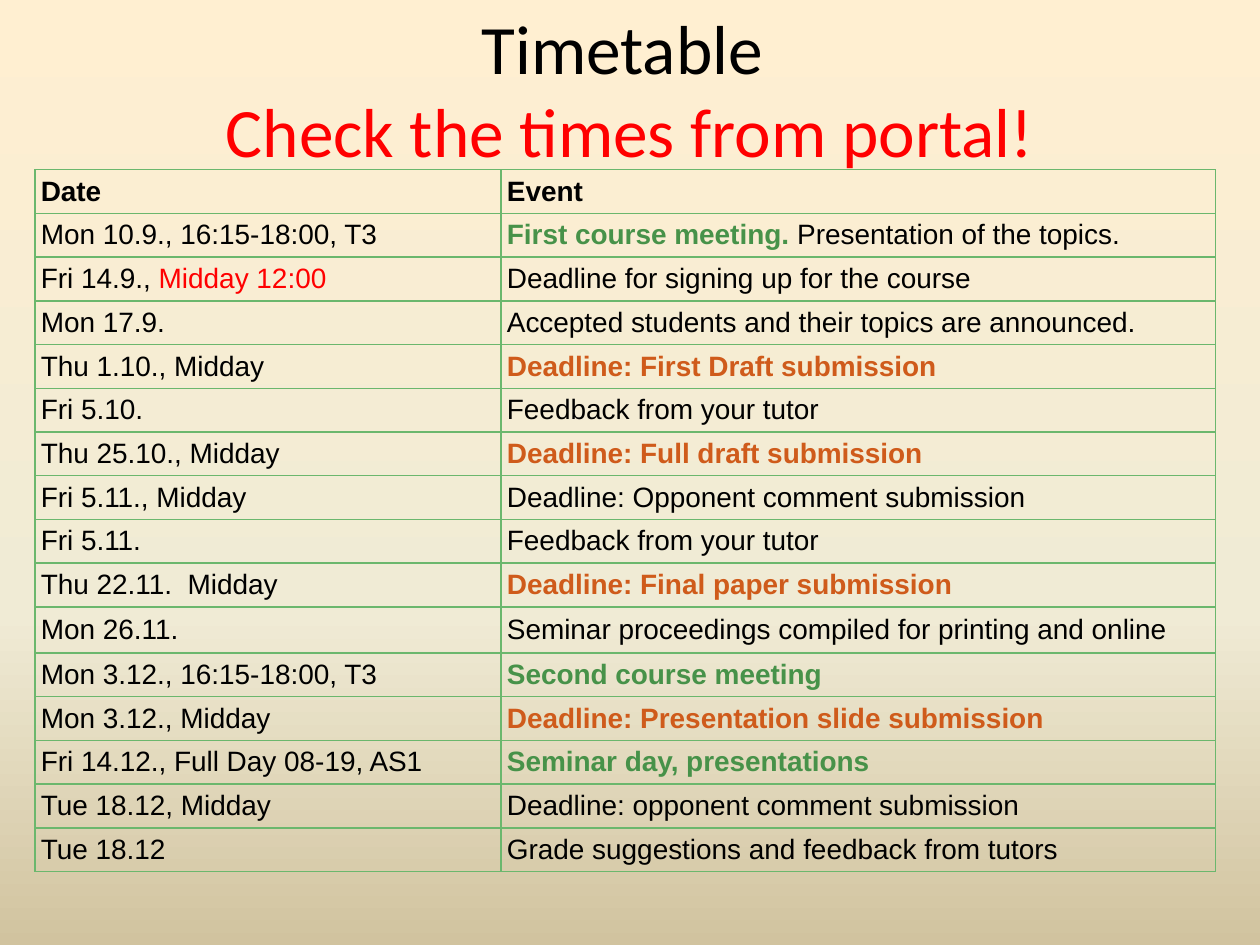
import copy
from dataclasses import dataclass

import lxml.etree
import pptx
import pptx.dml.color
import pptx.enum.text
import pptx.oxml.ns
import pptx.util

COLORS = {
    "text": "000000",
    "alert": "FF0000",
    "meeting": "479249",
    "deadline": "CF5B1B",
    "border": "6BB76D",
}
BACKGROUND_STOPS = ((0, "FFEFD1"), (0.65, "F0EBD5"), (1, "D1C39F"))
COLUMN_WIDTHS = (266.4, 408.2)
ROW_HEIGHT = 25
TALL_ROWS = {10: 26.4}
CELL_FORMAT = {
    "vertical_anchor": pptx.enum.text.MSO_ANCHOR.MIDDLE,
    **{
        f"margin_{side}": pptx.util.Pt(3.3)
        for side in ("left", "right", "top", "bottom")
    },
}
TITLE_FORMAT = {
    "word_wrap": True,
    "auto_size": pptx.enum.text.MSO_AUTO_SIZE.NONE,
    "vertical_anchor": pptx.enum.text.MSO_ANCHOR.MIDDLE,
}


@dataclass(frozen=True)
class Span:
    text: str
    color: str = "text"
    bold: bool = False


@dataclass(frozen=True)
class Entry:
    date: tuple[Span, ...]
    event: tuple[Span, ...]


def entry(date: str, event: str, color: str = "text", bold: bool = False) -> Entry:
    return Entry((Span(date, bold=bold and color == "text"),), (Span(event, color, bold),))


def deadline(date: str, event: str) -> Entry:
    return entry(date, f"Deadline: {event} submission", "deadline", True)


ENTRIES = (
    entry("Date", "Event", bold=True),
    Entry(
        (Span("Mon 10.9., 16:15-18:00, T3"),),
        (Span("First course meeting. ", "meeting", True), Span("Presentation of the topics.")),
    ),
    Entry(
        (Span("Fri 14.9., "), Span("Midday 12:00", "alert")),
        (Span("Deadline for signing up for the course"),),
    ),
    entry("Mon 17.9.", "Accepted students and their topics are announced."),
    deadline("Thu 1.10., Midday", "First Draft"),
    entry("Fri 5.10.", "Feedback from your tutor"),
    deadline("Thu 25.10., Midday", "Full draft"),
    entry("Fri 5.11., Midday", "Deadline: Opponent comment submission"),
    entry("Fri 5.11.", "Feedback from your tutor"),
    deadline("Thu 22.11.  Midday", "Final paper"),
    entry("Mon 26.11.", "Seminar proceedings compiled for printing and online"),
    entry("Mon 3.12., 16:15-18:00, T3", "Second course meeting", "meeting", True),
    deadline("Mon 3.12., Midday", "Presentation slide"),
    entry("Fri 14.12., Full Day 08-19, AS1", "Seminar day, presentations", "meeting", True),
    entry("Tue 18.12, Midday", "Deadline: opponent comment submission"),
    entry("Tue 18.12", "Grade suggestions and feedback from tutors"),
)


def apply_format(target: object, values: dict) -> None:
    for name, value in values.items():
        setattr(target, name, value)


def add_span(para, span: Span, font: str, size: float) -> None:
    run = para.add_run()
    run.text = span.text
    apply_format(
        run.font, {"name": font, "size": pptx.util.Pt(size), "bold": span.bold}
    )
    run.font.color.rgb = pptx.dml.color.RGBColor.from_string(COLORS[span.color])


def paint_background(page) -> None:
    fill = page.background.fill
    fill.gradient()
    fill.gradient_angle = 270
    stop_list = page._element.find(".//" + pptx.oxml.ns.qn("a:gsLst"))
    stop_list.append(copy.deepcopy(stop_list[-1]))
    for stop, (position, color) in zip(fill.gradient_stops, BACKGROUND_STOPS):
        stop.position = position
        stop.color.rgb = pptx.dml.color.RGBColor.from_string(color)


def add_title(page) -> None:
    box = page.shapes.add_textbox(*map(pptx.util.Pt, (48, 29.5, 624, 42)))
    apply_format(box.text_frame, TITLE_FORMAT)
    para = box.text_frame.paragraphs[0]
    para.alignment = pptx.enum.text.PP_ALIGN.CENTER
    add_span(para, Span("Timetable "), "Calibri", 39.6)
    para.add_line_break()
    add_span(para, Span("Check the times from portal!", "alert"), "Calibri", 39.6)


def add_borders(cell) -> None:
    qn = pptx.oxml.ns.qn
    properties = cell._tc.get_or_add_tcPr()
    for side in ("lnL", "lnR", "lnT", "lnB"):
        line = lxml.etree.SubElement(properties, qn(f"a:{side}"), w=str(pptx.util.Pt(1)))
        fill = lxml.etree.SubElement(line, qn("a:solidFill"))
        lxml.etree.SubElement(fill, qn("a:srgbClr"), val=COLORS["border"])


def fill_cell(cell, spans: tuple[Span, ...]) -> None:
    apply_format(cell, CELL_FORMAT)
    add_borders(cell)
    cell.fill.background()
    for span in spans:
        add_span(cell.text_frame.paragraphs[0], span, "Arial", 16)


def add_timetable(page) -> None:
    heights = [TALL_ROWS.get(index, ROW_HEIGHT) for index in range(len(ENTRIES))]
    bounds = (20, 97, sum(COLUMN_WIDTHS), sum(heights))
    table = page.shapes.add_table(
        len(ENTRIES), len(COLUMN_WIDTHS), *map(pptx.util.Pt, bounds)
    ).table
    apply_format(table, {"first_row": False, "horz_banding": False})
    for column, width in zip(table.columns, COLUMN_WIDTHS):
        column.width = pptx.util.Pt(width)
    for row, height, item in zip(table.rows, heights, ENTRIES):
        row.height = pptx.util.Pt(height)
        for cell, spans in zip(row.cells, (item.date, item.event)):
            fill_cell(cell, spans)


def main() -> None:
    deck = pptx.Presentation()
    apply_format(
        deck, {"slide_width": pptx.util.Pt(720), "slide_height": pptx.util.Pt(540)}
    )
    page = deck.slides.add_slide(deck.slide_layouts[6])
    paint_background(page)
    add_title(page)
    add_timetable(page)
    deck.save("out.pptx")


if __name__ == "__main__":
    main()
